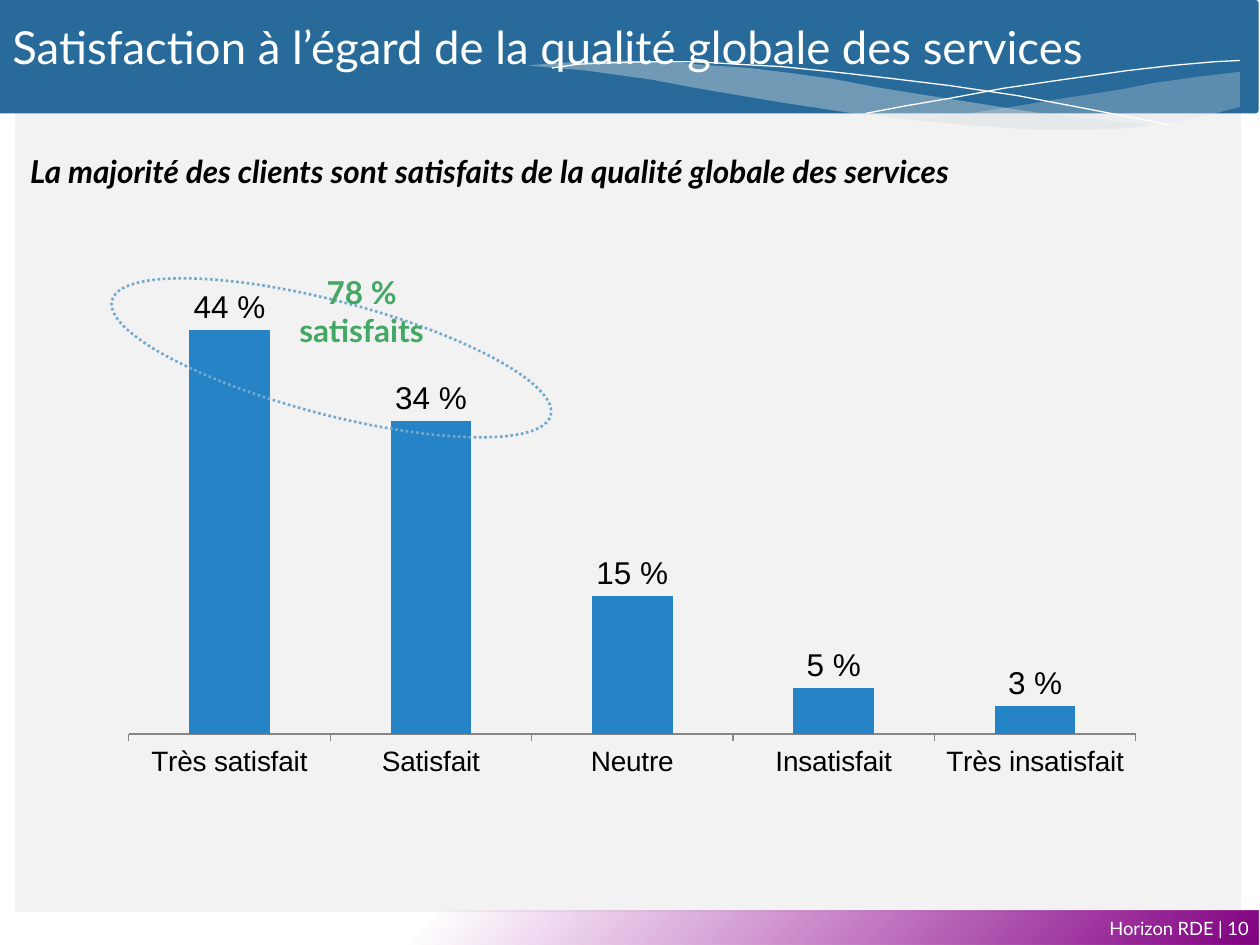
from lxml import etree
from pptx import Presentation
from pptx.chart.data import CategoryChartData
from pptx.dml.color import RGBColor
from pptx.enum.chart import XL_CHART_TYPE, XL_LABEL_POSITION, XL_TICK_MARK
from pptx.enum.dml import MSO_LINE
from pptx.enum.shapes import MSO_SHAPE
from pptx.enum.text import MSO_ANCHOR, PP_ALIGN
from pptx.oxml import parse_xml
from pptx.oxml.ns import nsdecls, qn
from pptx.util import Inches, Pt

RECT, ROUND, OVAL = MSO_SHAPE.RECTANGLE, MSO_SHAPE.ROUNDED_RECTANGLE, MSO_SHAPE.OVAL
LEFT, CENTER, RIGHT = PP_ALIGN.LEFT, PP_ALIGN.CENTER, PP_ALIGN.RIGHT
TOP, MIDDLE = MSO_ANCHOR.TOP, MSO_ANCHOR.MIDDLE
COLUMN = XL_CHART_TYPE.COLUMN_CLUSTERED
OUTSIDE, DOTS = XL_LABEL_POSITION.OUTSIDE_END, MSO_LINE.ROUND_DOT
TICK_OUT = XL_TICK_MARK.OUTSIDE

WHITE = RGBColor(0xFF, 0xFF, 0xFF)
BLACK = RGBColor(0, 0, 0)
PANEL = RGBColor(0xF2, 0xF2, 0xF2)
NAVY = RGBColor(0x1D, 0x62, 0x94)
MIST = RGBColor(0xDF, 0xE3, 0xE5)
BLUE = RGBColor(0x26, 0x83, 0xC6)
SKY = RGBColor(0x74, 0xA9, 0xCF)
GREEN = RGBColor(0x42, 0xA8, 0x64)
GRAY = RGBColor(0x86, 0x86, 0x86)

RATINGS = [
    ("Très insatisfait", 0.03),
    ("Insatisfait", 0.05),
    ("Neutre", 0.15),
    ("Satisfait", 0.34),
    ("Très satisfait", 0.44),
]

RIGHT_WAVE = [
    (9.84, 0.57), (9.51, 0.61), (9.15, 0.66), (8.9, 0.71), (8.44, 0.78),
    (8.02, 0.85), (7.63, 0.91), (7.26, 0.95), (7.62, 0.99), (8.05, 1.02),
    (8.52, 1.03), (8.92, 1.01), (9.27, 0.98), (9.57, 0.92), (9.84, 0.85),
]
LEFT_WAVE = [
    (9.16, 1), (8.71, 0.95), (8.2, 0.89), (7.63, 0.8), (7, 0.7), (6.63, 0.63),
    (6.28, 0.58), (5.95, 0.54), (5.65, 0.52), (5.28, 0.49), (4.95, 0.48),
    (4.66, 0.49), (4.41, 0.5), (4.19, 0.52), (4.65, 0.56), (5.16, 0.63),
    (5.53, 0.7), (6.18, 0.81), (6.77, 0.9), (7.3, 0.96), (7.77, 1),
    (8.18, 1.03), (8.63, 1.03), (8.95, 1.02),
]
FALLING = [
    (4.38, 0.54), (4.59, 0.51), (4.82, 0.5), (5.13, 0.49), (5.53, 0.49),
    (5.85, 0.51), (6.21, 0.53), (6.61, 0.57), (7.05, 0.62), (7.54, 0.68),
    (8.08, 0.76), (8.66, 0.87), (9.28, 0.99),
]
RISING = [
    (6.87, 0.9), (7.19, 0.84), (7.54, 0.78), (7.97, 0.7), (8.45, 0.63),
    (8.95, 0.56), (9.3, 0.52), (9.64, 0.49), (9.84, 0.48),
]


def paint(shape, fill=None, alpha=100):
    shape.shadow.inherit = False
    shape.line.fill.background()
    if fill is None:
        shape.fill.background()
        return
    shape.fill.solid()
    shape.fill.fore_color.rgb = fill
    if alpha < 100:
        color = shape.fill._xPr.find(qn("a:solidFill"))[0]
        etree.SubElement(color, qn("a:alpha"), val=str(alpha * 1000))


def add_box(slide, kind, box, fill=None, alpha=100):
    shape = slide.shapes.add_shape(kind, *map(Inches, box))
    paint(shape, fill, alpha)
    return shape


def add_glow(slide, box):
    shape = add_box(slide, RECT, box)
    old = shape.fill._xPr.find(qn("a:noFill"))
    old.getparent().replace(old, parse_xml(
        f'<a:gradFill {nsdecls("a")} rotWithShape="1"><a:gsLst>'
        '<a:gs pos="0"><a:srgbClr val="800080"/></a:gs>'
        '<a:gs pos="66000"><a:srgbClr val="9A009A"><a:alpha val="0"/></a:srgbClr></a:gs>'
        '</a:gsLst><a:path path="circle"><a:fillToRect l="100000" t="100000"/></a:path>'
        '</a:gradFill>'))


def add_curve(slide, points, close, fill=None, alpha=100):
    pen, *rest = [(Inches(x), Inches(y)) for x, y in points]
    build = slide.shapes.build_freeform(*pen)
    build.add_line_segments(rest, close=close)
    shape = build.convert_to_shape()
    paint(shape, fill, alpha)
    if not close:
        shape.line.color.rgb = WHITE
        shape.line.width = Pt(0)


def add_text(slide, box, lines, size, color, align=LEFT, anchor=TOP,
             bold=False, italic=False):
    frame = slide.shapes.add_textbox(*map(Inches, box)).text_frame
    frame.word_wrap = True
    frame.vertical_anchor = anchor
    frame.text = "\n".join(lines)
    for para in frame.paragraphs:
        para.alignment = align
        font = para.runs[0].font
        font.name, font.size = "Lato", Pt(size)
        font.bold, font.italic = bold, italic
        font.color.rgb = color


def set_font(font, size):
    font.name, font.size = "Arial", Pt(size)
    font.color.rgb = BLACK


def set_plot(chart, x, y, w, h):
    area = chart._chartSpace.chart.plotArea
    for old in area.findall(qn("c:layout")):
        area.remove(old)
    area.insert(0, parse_xml(
        f'<c:layout {nsdecls("c")}><c:manualLayout><c:layoutTarget val="inner"/>'
        '<c:xMode val="edge"/><c:yMode val="edge"/>'
        f'<c:x val="{x}"/><c:y val="{y}"/><c:w val="{w}"/><c:h val="{h}"/>'
        '</c:manualLayout></c:layout>'))


def add_bars(slide, box):
    data = CategoryChartData(number_format="0%")
    data.categories = [name for name, _ in RATINGS]
    data.add_series("Satisfaction", [value for _, value in RATINGS])
    chart = slide.shapes.add_chart(COLUMN, *map(Inches, box), data).chart
    chart.has_legend = chart.has_title = False
    set_font(chart.font, 18)
    set_plot(chart, 0.06, 0.09, 0.9, 0.7)

    plot = chart.plots[0]
    plot.gap_width = 150
    plot.vary_by_categories = False
    plot.has_data_labels = True
    labels = plot.data_labels
    labels.show_value = True
    labels.number_format, labels.number_format_is_linked = "0 %", False
    labels.position = OUTSIDE
    set_font(labels.font, 18)
    fill = plot.series[0].format.fill
    fill.solid()
    fill.fore_color.rgb = BLUE

    values = chart.value_axis
    values.visible = values.has_major_gridlines = False
    values.minimum_scale, values.maximum_scale = 0, 0.5
    names = chart.category_axis
    names.reverse_order = True
    names.major_tick_mark = TICK_OUT
    names.format.line.color.rgb = GRAY
    set_font(names.tick_labels.font, 16)


def add_ring(slide, box, angle):
    ring = add_box(slide, OVAL, box)
    ring.rotation = angle
    ring.line.color.rgb = SKY
    ring.line.width = Pt(1.5)
    ring.line.dash_style = DOTS


def main():
    deck = Presentation()
    deck.slide_width, deck.slide_height = Inches(10), Inches(7.5)
    slide = deck.slides.add_slide(deck.slide_layouts[6])

    add_box(slide, RECT, (0.12, 0.73, 9.73, 6.51), PANEL)
    add_glow(slide, (-0.02, 7.23, 10.01, 0.27))
    add_text(slide, (0.01, 7.12, 10, 0.49), ["Horizon RDE | 10"], 10.5, WHITE,
             RIGHT, MIDDLE)
    banner = add_box(slide, ROUND, (-0.02, 0, 10.01, 0.9), NAVY, 95)
    banner.adjustments[0] = 0.03
    add_curve(slide, RIGHT_WAVE, True, MIST, 29)
    add_curve(slide, LEFT_WAVE, True, MIST, 40)
    add_curve(slide, FALLING, False)
    add_curve(slide, RISING, False)

    add_text(slide, (0, 0.1, 9.3, 0.89),
             ["Satisfaction à l’égard de la qualité globale des services"], 26, WHITE)
    add_bars(slide, (0.49, 1.71, 8.88, 5.21))
    add_ring(slide, (0.83, 2.39, 3.6, 0.9), 14.7)
    add_text(slide, (1.99, 2.12, 1.76, 0.71), ["78 %", "satisfaits"], 18, GREEN,
             CENTER, bold=True)
    add_text(slide, (0.14, 1.16, 10.03, 0.4),
             ["La majorité des clients sont satisfaits de la qualité globale des services"],
             18, BLACK, bold=True, italic=True)
    deck.save("out.pptx")


if __name__ == "__main__":
    main()
